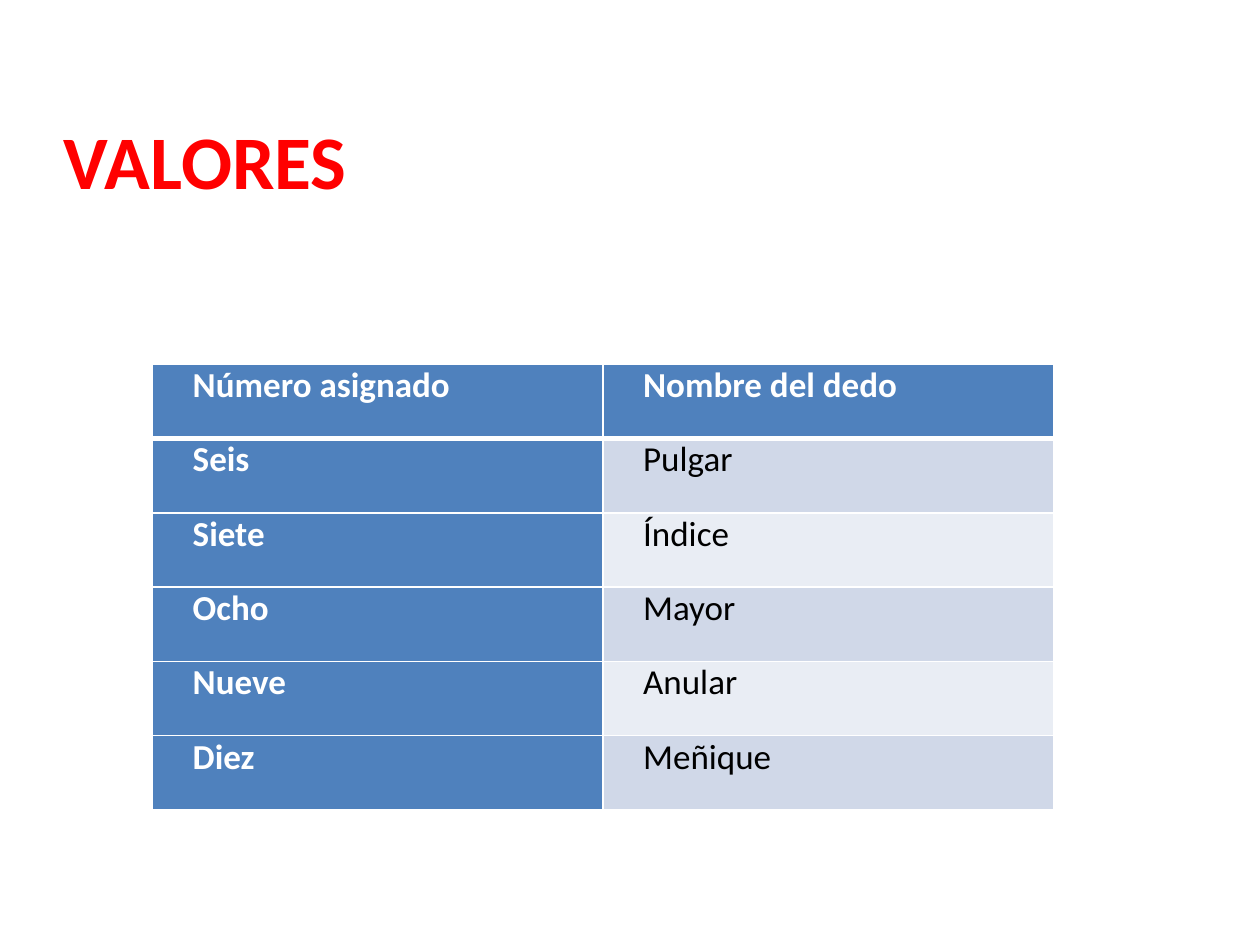
from lxml.etree import SubElement
from pptx import Presentation
from pptx.dml.color import RGBColor
from pptx.enum.text import MSO_ANCHOR, PP_ALIGN
from pptx.oxml.ns import qn
from pptx.util import Inches, Pt

COLORS = {
    "title": "FF0000",
    "head": "4F81BD",
    "band_dark": "D0D8E8",
    "band_light": "E9EDF4",
    "white": "FFFFFF",
    "black": "000000",
}
FINGERS = [
    ("Número asignado", "Nombre del dedo"),
    ("Seis", "Pulgar"),
    ("Siete", "Índice"),
    ("Ocho", "Mayor"),
    ("Nueve", "Anular"),
    ("Diez", "Meñique"),
]


class SlideBuilder:
    """Draws styled elements on the current slide."""

    font_name = "Calibri"

    def __init__(self, slide):
        self.slide = slide

    def style(self, paragraph, color, **formats):
        for key, value in {"name": self.font_name, **formats}.items():
            setattr(paragraph.font, key, value)
        paragraph.font.color.rgb = RGBColor.from_string(COLORS[color])

    def title(self, text, left, top, width, height):
        frame = self.slide.shapes.add_textbox(
            Inches(left), Inches(top), Inches(width), Inches(height)
        ).text_frame
        frame.word_wrap = True
        frame.vertical_anchor = MSO_ANCHOR.MIDDLE
        heading = frame.paragraphs[0]
        heading.text = text
        self.style(heading, "title", size=Pt(43.2), bold=True)

    def border(self, cell, side, points):
        line = SubElement(
            cell._tc.get_or_add_tcPr(), qn(f"a:ln{side}"), w=str(Pt(points))
        )
        fill = SubElement(line, qn("a:solidFill"))
        SubElement(fill, qn("a:srgbClr"), val=COLORS["white"])

    def cell(self, cell, text, row, column):
        is_head = row == 0 or column == 0
        band = "band_dark" if row % 2 else "band_light"
        widths = {"L": 1, "R": 1, "T": 3 if row == 1 else 1, "B": 3 if row == 0 else 1}
        for side, points in widths.items():
            self.border(cell, side, points)
        cell.fill.solid()
        cell.fill.fore_color.rgb = RGBColor.from_string(
            COLORS["head" if is_head else band]
        )
        margins = {"left": 0.07, "right": 0.07, "top": 0, "bottom": 0}
        for side, inset in margins.items():
            setattr(cell, f"margin_{side}", Inches(inset))
        label = cell.text_frame.paragraphs[0]
        label.text = text
        label.alignment = PP_ALIGN.JUSTIFY
        label._p.get_or_add_pPr().set("marL", str(Inches(0.25)))
        self.style(label, "white" if is_head else "black", size=Pt(20), bold=is_head)

    def table(self, rows, left, top, width, height):
        table = self.slide.shapes.add_table(
            len(rows), len(rows[0]),
            Inches(left), Inches(top), Inches(width), Inches(height),
        ).table
        for row, texts in enumerate(rows):
            for column, text in enumerate(texts):
                self.cell(table.cell(row, column), text, row, column)


def main():
    deck = Presentation()
    deck.slide_width, deck.slide_height = Inches(10), Inches(7.5)
    builder = SlideBuilder(deck.slides.add_slide(deck.slide_layouts[6]))
    builder.title("VALORES", 0.41, 0.85, 3.57, 0.83)
    builder.table(FINGERS, 1.21, 2.89, 7.15, 3.54)
    deck.save("out.pptx")


if __name__ == "__main__":
    main()
